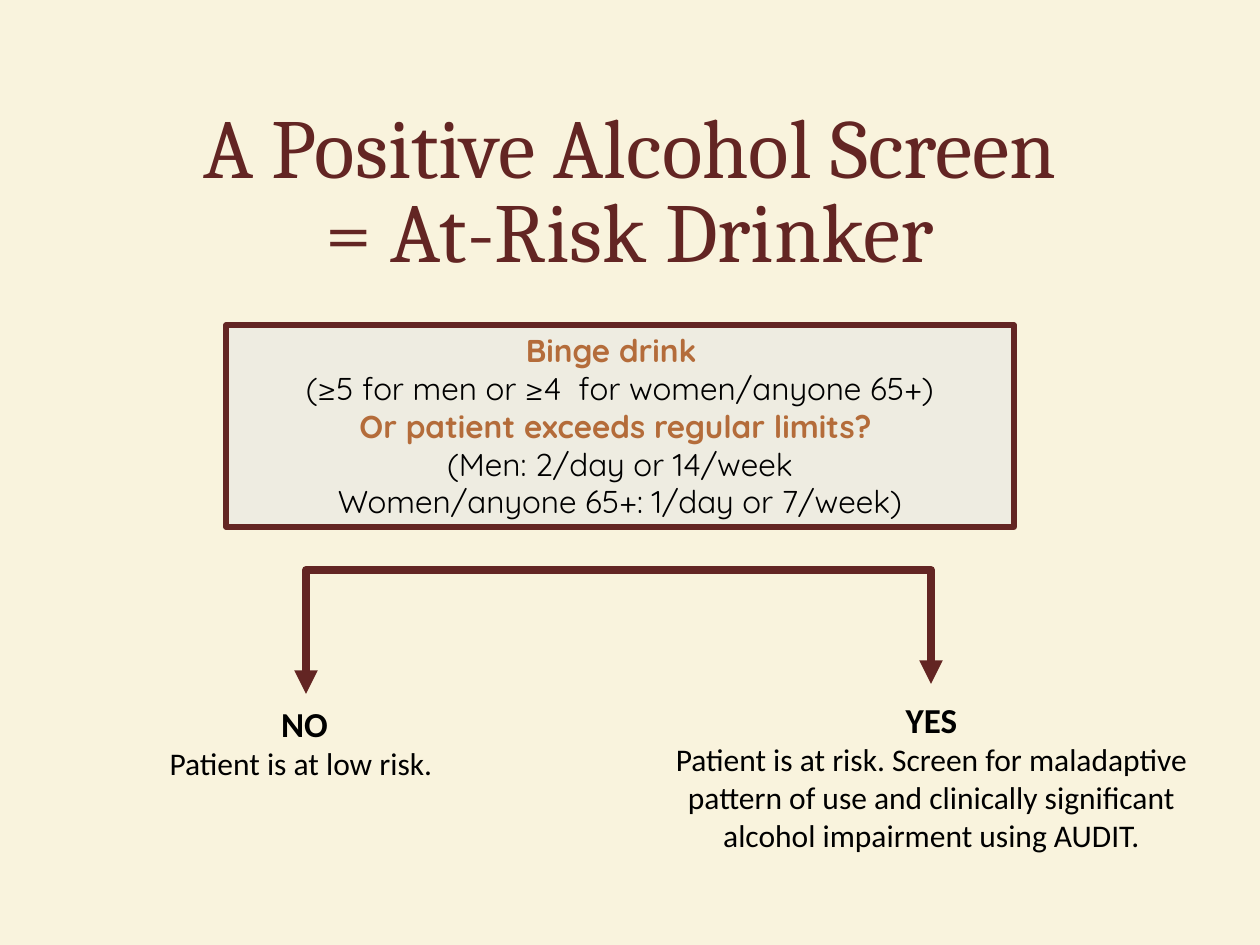
from dataclasses import dataclass

from lxml import etree
from pptx import Presentation, util as u
from pptx.dml.color import RGBColor
from pptx.enum import shapes, text
from pptx.oxml.ns import qn

EMU_PER_PX = 914400 / 126
COLORS = {
    "background": "F9F3DD",
    "maroon": "632523",
    "panel": "EEECE1",
    "question": "B46C3A",
    "body": "000000",
}


@dataclass(frozen=True)
class Line:
    wording: str
    size: int = 18
    color: str = "body"
    bold: bool = False


@dataclass(frozen=True)
class Outcome:
    lines: tuple[Line, ...]
    left: int
    top: int
    width: int
    height: int
    arrow_x: int
    arrow_y: int


FORK = (706, 570)
CRITERIA = (
    Line("Binge drink  ", color="question", bold=True),
    Line("(≥5 for men or ≥4  for women/anyone 65+)"),
    Line("Or patient exceeds regular limits? ", color="question", bold=True),
    Line("(Men: 2/day or 14/week"),
    Line("Women/anyone 65+: 1/day or 7/week)"),
)
OUTCOMES = (
    Outcome(
        (Line("YES", 20, bold=True),
         Line("Patient is at risk. Screen for maladaptive pattern of use and "
              "clinically significant alcohol impairment using AUDIT.")),
        653, 692, 557, 170, 931, 684),
    Outcome(
        (Line("NO", 20, bold=True), Line("Patient is at low risk. ")),
        42, 696, 525, 93, 306, 694),
)


def px(*lengths: int) -> list[u.Emu]:
    return [u.Emu(round(length * EMU_PER_PX)) for length in lengths]


def rgb(name: str) -> RGBColor:
    return RGBColor.from_string(COLORS[name])


def add_run(paragraph, line: Line, font_name: str) -> None:
    run = paragraph.add_run()
    run.text = line.wording
    run.font.name = font_name
    run.font.size = u.Pt(line.size)
    run.font.bold = line.bold
    run.font.color.rgb = rgb(line.color)


def write_lines(frame, lines: tuple[Line, ...], font_name: str) -> None:
    frame.word_wrap = True
    for number, line in enumerate(lines):
        paragraph = frame.add_paragraph() if number else frame.paragraphs[0]
        paragraph.alignment = text.PP_ALIGN.CENTER
        add_run(paragraph, line, font_name)


def add_title(slide) -> None:
    title = slide.shapes.title
    title.left, title.top, title.width, title.height = px(0, 116, 1260, 158)
    title.text_frame.vertical_anchor = text.MSO_ANCHOR.MIDDLE
    paragraph = title.text_frame.paragraphs[0]
    paragraph.alignment = text.PP_ALIGN.CENTER
    paragraph.line_spacing = u.Pt(48)
    add_run(paragraph, Line("A Positive Alcohol Screen", 48, "maroon"), "Cambria")
    paragraph.add_line_break()
    add_run(paragraph, Line("= At-Risk Drinker", 48, "maroon"), "Cambria")


def add_criteria(slide) -> None:
    panel = slide.shapes.add_shape(
        shapes.MSO_SHAPE.RECTANGLE, *px(226, 325, 788, 202))
    panel.shadow.inherit = False
    panel.fill.solid()
    panel.fill.fore_color.rgb = rgb("panel")
    panel.line.color.rgb = rgb("maroon")
    panel.line.width = u.Pt(3)
    panel.text_frame.vertical_anchor = text.MSO_ANCHOR.TOP
    write_lines(panel.text_frame, CRITERIA, "Quicksand")


def add_elbow_arrow(slide, end_x: int, end_y: int) -> None:
    """Run sideways from the fork, then down to an arrowhead."""
    arrow = slide.shapes.add_connector(
        shapes.MSO_CONNECTOR.ELBOW, *px(*FORK, end_x, end_y))
    arrow.line.color.rgb = rgb("maroon")
    arrow.line.width = u.Pt(4.5)
    properties = arrow._element.spPr
    properties.find(qn("a:prstGeom")).set("prst", "bentConnector2")
    etree.SubElement(properties.find(qn("a:ln")), qn("a:tailEnd"), type="triangle")
    etree.SubElement(properties, qn("a:effectLst"))


def add_outcome(slide, outcome: Outcome) -> None:
    label = slide.shapes.add_textbox(
        *px(outcome.left, outcome.top, outcome.width, outcome.height))
    write_lines(label.text_frame, outcome.lines, "Calibri")
    add_elbow_arrow(slide, outcome.arrow_x, outcome.arrow_y)


def main() -> None:
    deck = Presentation()
    deck.slide_width, deck.slide_height = px(1260, 945)
    slide = deck.slides.add_slide(deck.slide_layouts[5])
    slide.background.fill.solid()
    slide.background.fill.fore_color.rgb = rgb("background")
    add_title(slide)
    add_criteria(slide)
    for outcome in OUTCOMES:
        add_outcome(slide, outcome)
    deck.save("out.pptx")


if __name__ == "__main__":
    main()
